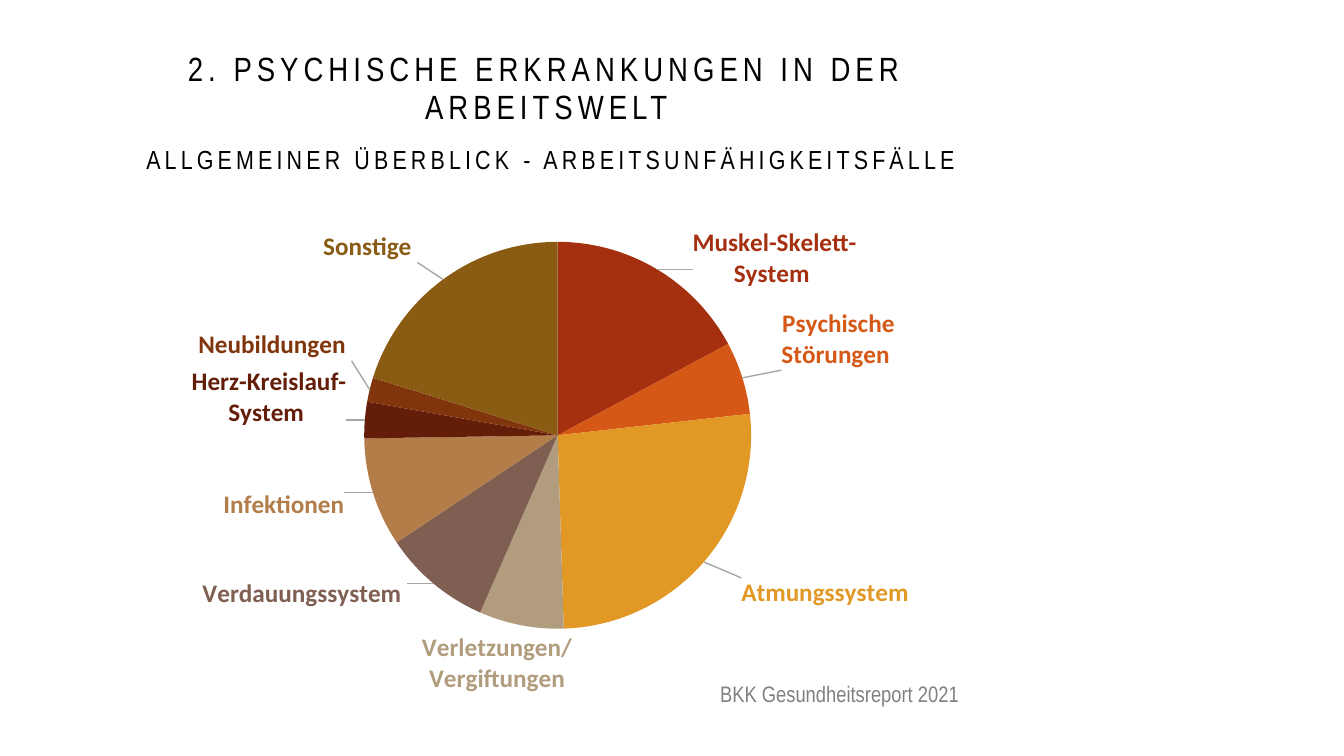
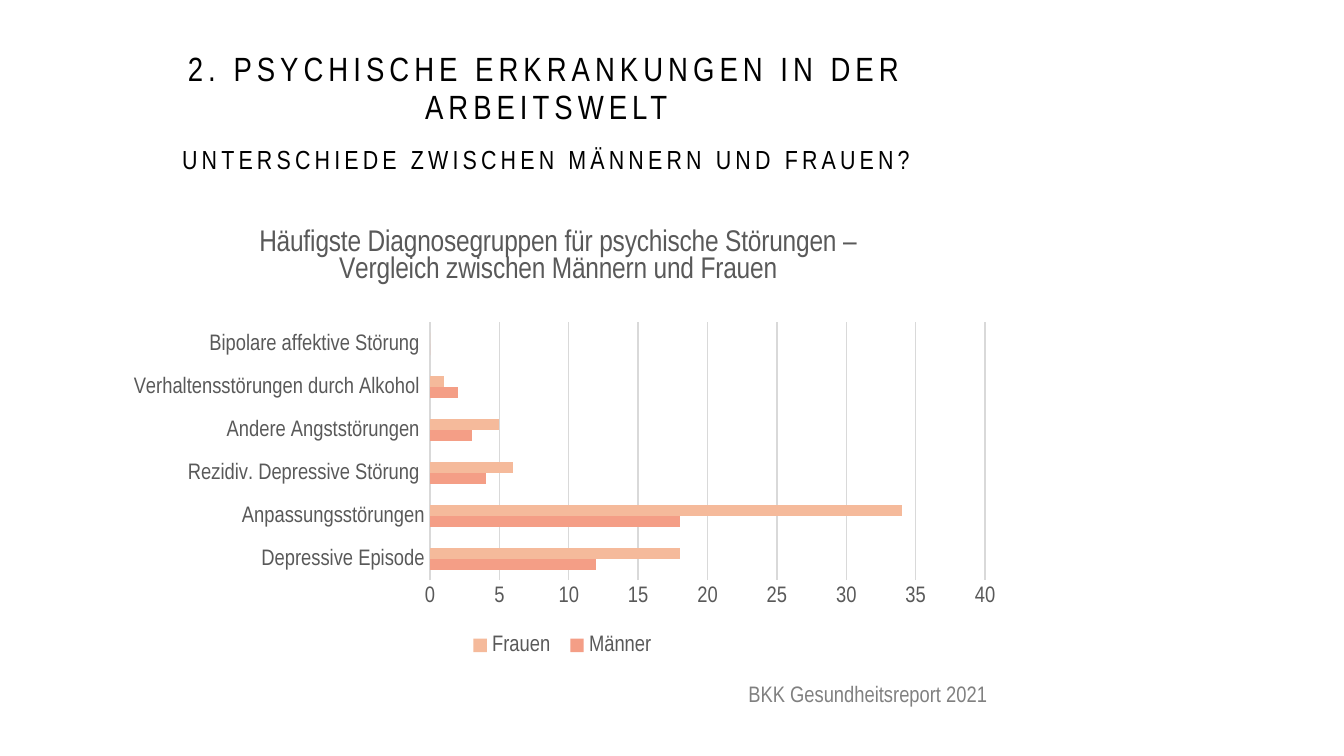
from lxml import etree
from pptx import Presentation
from pptx.chart.data import CategoryChartData
from pptx.dml.color import RGBColor
from pptx.enum.chart import (XL_CHART_TYPE, XL_LABEL_POSITION,
                             XL_LEGEND_POSITION, XL_TICK_MARK)
from pptx.enum.text import MSO_ANCHOR, MSO_AUTO_SIZE, PP_ALIGN
from pptx.oxml import parse_xml
from pptx.oxml.ns import qn
from pptx.util import Inches, Pt

PIE, BAR = XL_CHART_TYPE.PIE, XL_CHART_TYPE.BAR_CLUSTERED
OUT, BELOW = XL_LABEL_POSITION.OUTSIDE_END, XL_LEGEND_POSITION.BOTTOM
NO_TICK = XL_TICK_MARK.NONE
CENTER, MIDDLE, TOP = PP_ALIGN.CENTER, MSO_ANCHOR.MIDDLE, MSO_ANCHOR.TOP
NO_FIT = MSO_AUTO_SIZE.NONE

BLACK = RGBColor(0x00, 0x00, 0x00)
GREY = RGBColor(0x80, 0x80, 0x80)
SLATE = RGBColor(0x59, 0x59, 0x59)
PALE = RGBColor(0xD9, 0xD9, 0xD9)
SALMON = RGBColor(0xF4, 0x9E, 0x86)
PEACH = RGBColor(0xF5, 0xBA, 0x9B)
NARROW, ROUND = "Arial Narrow", "Calibri"
NS = "http://schemas.openxmlformats.org/drawingml/2006/"
WIDE = Inches(10)
HIGH = WIDE * 9 // 16

TITLE = "2. PSYCHISCHE ERKRANKUNGEN IN DER ARBEITSWELT"
SOURCE = "BKK Gesundheitsreport 2021"
HEAD = {"box": (0.69, 0.35, 6.75, 0.62), "anchor": MIDDLE,
        "size": 18, "track": 270, "line": 20}
SUB = {"box": (0.69, 1.01, 6.75, 0.37), "anchor": TOP,
       "size": 14, "track": 220, "line": 17.2}

# Boxes and plots are left, top, width, height in inches on the slide.
CASES = {
    "sub": " ALLGEMEINER ÜBERBLICK - ARBEITSUNFÄHIGKEITSFÄLLE",
    "foot": (5.26, 5.01, 2.4, 0.3),
    "box": (0.16, 1.28, 7.82, 4.03),
    "plot": (2.71, 1.8, 2.88, 2.88),
    # name, share, colour, label shift as shares of the chart
    "parts": [
        ("Muskel-Skelett-System ", 17, RGBColor(0xA5, 0x30, 0x0F), (0.03, 0.05)),
        ("Psychische Störungen ", 6, RGBColor(0xD5, 0x58, 0x16), (0.03, -0.01)),
        ("Atmungssystem", 26, RGBColor(0xE1, 0x98, 0x25), (0.03, 0.02)),
        ("Verletzungen/Vergiftungen", 7, RGBColor(0xB1, 0x9C, 0x7D), (0.05, 0)),
        ("Verdauungssystem ", 9, RGBColor(0x7F, 0x5F, 0x52), (-0.02, -0.02)),
        ("Infektionen", 9, RGBColor(0xB2, 0x7D, 0x49), (-0.02, -0.01)),
        ("Herz-Kreislauf-System ", 3, RGBColor(0x63, 0x1D, 0x09), (-0.01, -0.04)),
        ("Neubildungen ", 2, RGBColor(0x80, 0x35, 0x0D), (-0.01, -0.05)),
        ("Sonstige ", 20, RGBColor(0x8A, 0x5C, 0x13), (-0.02, -0.02)),
    ],
}
GENDER = {
    "sub": " UNTERSCHIEDE ZWISCHEN MÄNNERN UND FRAUEN? ",
    "foot": (5.47, 5.01, 2.2, 0.3),
    "box": (0.92, 1.53, 6.53, 3.39),
    "plot": (3.2, 2.4, 4.13, 1.92),
    "title": ["Häufigste Diagnosegruppen für psychische Störungen –",
              "Vergleich zwischen Männern und Frauen"],
    "names": ["Depressive Episode", "Anpassungsstörungen",
              "Rezidiv. Depressive Störung ", "Andere Angststörungen ",
              "Verhaltensstörungen durch Alkohol ",
              "Bipolare affektive Störung "],
    "rows": [("Männer", [12, 18, 4, 3, 2, 0], SALMON),
             ("Frauen ", [18, 34, 6, 5, 1, 0], PEACH)],
}


def style(font, size, color, name=NARROW, bold=False):
    form = {"size": Pt(size), "name": name, "bold": bold}
    for key, val in form.items():
        setattr(font, key, val)
    font.color.rgb = color


def place(shape, box):
    for key, val in zip(("left", "top", "width", "height"), box):
        setattr(shape, key, Inches(val))


def fill(holder, text, form):
    place(holder, form["box"])
    frame = holder.text_frame
    frame.auto_size, frame.word_wrap = NO_FIT, True
    frame.vertical_anchor = form["anchor"]
    para = frame.paragraphs[0]
    para.alignment, para.line_spacing = CENTER, Pt(form["line"])
    para.space_before = Pt(0)
    run = para.add_run()
    run.text = text
    style(run.font, form["size"], BLACK)
    run.font._element.set("spc", str(form["track"]))


def add_base(deck, data):
    """Add a slide with its title, subtitle and source note."""
    slide = deck.slides.add_slide(deck.slide_layouts[2])
    head, sub = slide.placeholders
    fill(head, TITLE, HEAD)
    fill(sub, data["sub"], SUB)
    note = slide.shapes.add_textbox(*map(Inches, data["foot"]))
    note.text_frame.word_wrap = True
    run = note.text_frame.paragraphs[0].add_run()
    run.text = SOURCE
    style(run.font, 12, GREY)
    return slide


def share(box, plot):
    """Turn a plot in slide inches into shares of its chart's box."""
    left, top, width, height = box
    x, y, w, h = plot
    return (x - left) / width, (y - top) / height, w / width, h / height


def lay(node, at, vals, inner=False):
    """Give a chart part a manual layout, as child number at."""
    for old in node.findall(qn("c:layout")):
        node.remove(old)
    layout = etree.Element(qn("c:layout"))
    manual = etree.SubElement(layout, qn("c:manualLayout"))
    tags = []
    if inner:
        tags = [("layoutTarget", "inner")]
    if inner or node.tag == qn("c:title"):
        tags += [("xMode", "edge"), ("yMode", "edge")]
    tags += zip("xywh", map(str, vals))
    for tag, val in tags:
        etree.SubElement(manual, qn("c:" + tag)).set("val", val)
    node.insert(at, layout)


def add_chart(slide, kind, data, names, rows):
    table = CategoryChartData()
    table.categories = names
    for name, vals in rows:
        table.add_series(name, vals)
    box = map(Inches, data["box"])
    chart = slide.shapes.add_chart(kind, *box, table).chart
    chart.has_title = chart.has_legend = False
    area = chart.element.xpath("c:chart/c:plotArea")[0]
    lay(area, 0, share(data["box"], data["plot"]), True)
    return chart


def add_cases(deck):
    slide = add_base(deck, CASES)
    names, vals, colors, shifts = zip(*CASES["parts"])
    chart = add_chart(slide, PIE, CASES, names, [("Series 1", vals)])
    style(chart.font, 10, BLACK, ROUND)
    plot = chart.plots[0]
    plot.vary_by_categories = True
    row = plot.series[0]
    row.data_labels.position = OUT
    for i, color in enumerate(colors):
        point = row.points[i]
        point.format.fill.solid()
        point.format.fill.fore_color.rgb = color
        point.format.line.fill.background()
        label = point.data_label
        style(label.font, 13.5, color, ROUND, True)
        label.position = OUT
    root = chart.element
    for tag, val in (("showVal", "0"), ("showCatName", "1"),
                     ("showPercent", "0"), ("showLeaderLines", "1")):
        for node in root.xpath("//c:dLbls//c:" + tag):
            node.set("val", val)
    for node, shift in zip(root.xpath("//c:dLbl"), shifts):
        lay(node, 1, shift)
    for flag in root.xpath("//c:ser/c:dLbls/c:showLeaderLines"):
        flag.addnext(parse_xml(
            f'<c:leaderLines xmlns:c="{NS}chart" xmlns:a="{NS}main"><c:spPr>'
            '<a:ln w="9525"><a:solidFill><a:srgbClr val="A6A6A6"/>'
            '</a:solidFill></a:ln></c:spPr></c:leaderLines>'))


def add_gender(deck):
    slide = add_base(deck, GENDER)
    rows = GENDER["rows"]
    chart = add_chart(slide, BAR, GENDER, GENDER["names"],
                      [row[:2] for row in rows])
    style(chart.font, 10, BLACK)
    plot = chart.plots[0]
    plot.gap_width, plot.overlap = 182, 0
    plot.vary_by_categories = False
    for row, (_, _, color) in zip(plot.series, rows):
        row.format.fill.solid()
        row.format.fill.fore_color.rgb = color
    cat, val = chart.category_axis, chart.value_axis
    for axis in (cat, val):
        axis.major_tick_mark = axis.minor_tick_mark = NO_TICK
        style(axis.tick_labels.font, 12, SLATE)
    val.minimum_scale, val.maximum_scale, val.major_unit = 0, 40, 5
    val.has_major_gridlines = True
    val.format.line.fill.background()
    for line in (cat.format.line, val.major_gridlines.format.line):
        line.color.rgb, line.width = PALE, Pt(0.75)
    chart.has_legend = True
    chart.legend.position = BELOW
    chart.legend.include_in_layout = False
    style(chart.legend.font, 12, SLATE)
    chart.has_title = True
    frame = chart.chart_title.text_frame
    frame.text = "\n".join(GENDER["title"])
    for para in frame.paragraphs:
        para.alignment, para.line_spacing = CENTER, 0.8
        style(para.runs[0].font, 16, SLATE)
    lay(chart.element.xpath("c:chart/c:title")[0], 1, (0.15, 0.04))


def main():
    deck = Presentation()
    deck.slide_width, deck.slide_height = WIDE, HIGH
    add_cases(deck)
    add_gender(deck)
    deck.save("out.pptx")


if __name__ == "__main__":
    main()
